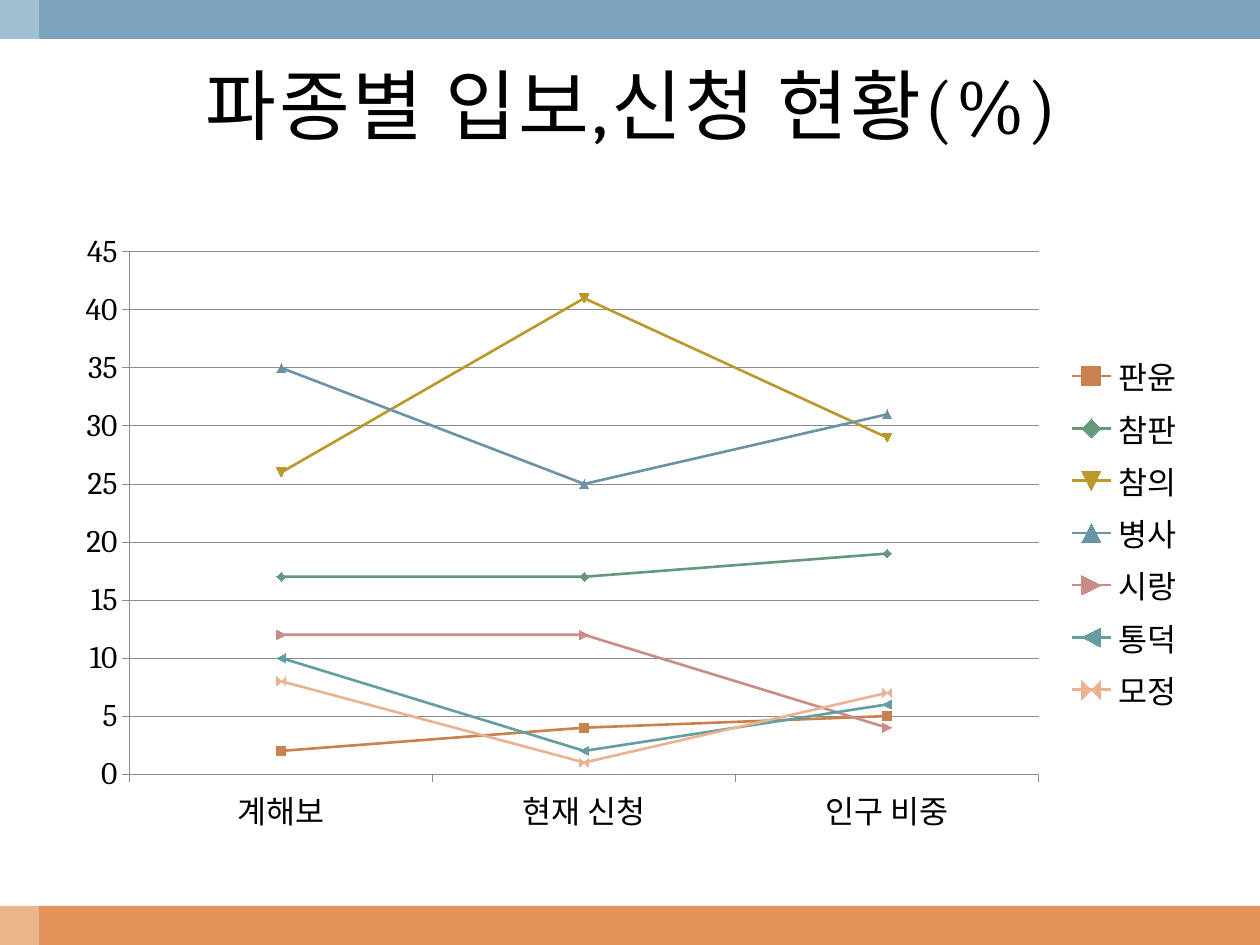
from dataclasses import dataclass

from lxml.etree import SubElement
from pptx import Presentation
from pptx.chart.data import CategoryChartData
from pptx.dml.color import RGBColor
from pptx.enum.chart import XL_CHART_TYPE, XL_LEGEND_POSITION, XL_TICK_MARK
from pptx.enum.shapes import MSO_SHAPE
from pptx.enum.text import MSO_ANCHOR, PP_ALIGN
from pptx.oxml.ns import qn
from pptx.util import Emu, Pt

EMU_PER_PX = 914400 / 126
SLIDE_WIDTH, SLIDE_HEIGHT, BAND = 1260, 945, 39


@dataclass(frozen=True)
class Theme:
    font: str = "Cambria"
    title_size: int = 44
    chart_size: int = 18
    text: str = "000000"
    axis: str = "8B8B8B"
    top_band: str = "7BA5BE"
    bottom_band: str = "E49458"
    overlay: str = "FFFFFF"


CATEGORIES = ["계해보", "현재 신청", "인구 비중"]
SERIES = [
    ("판윤", (2, 4, 5), "C9824D"),
    ("참판", (17, 17, 19), "66997C"),
    ("참의", (26, 41, 29), "BB982A"),
    ("병사", (35, 25, 31), "6C92A8"),
    ("시랑", (12, 12, 4), "C98D86"),
    ("통덕", (10, 2, 6), "639FA2"),
    ("모정", (8, 1, 7), "E9B291"),
]


def px(length):
    return Emu(round(length * EMU_PER_PX))


def paint(target, color):
    """Give a fill one solid colour."""
    target.solid()
    target.fore_color.rgb = RGBColor.from_string(color)


class SlideBuilder:
    def __init__(self, slide, theme):
        self.slide = slide
        self.theme = theme

    def style_font(self, font, size):
        font.name = self.theme.font
        font.size = Pt(size)
        font.bold = False
        font.color.rgb = RGBColor.from_string(self.theme.text)

    def title(self, text, left, top, width, height):
        shape = self.slide.shapes.title
        shape.left, shape.top = px(left), px(top)
        shape.width, shape.height = px(width), px(height)
        frame = shape.text_frame
        frame.word_wrap = True
        frame.vertical_anchor = MSO_ANCHOR.MIDDLE
        paragraph = frame.paragraphs[0]
        paragraph.alignment = PP_ALIGN.CENTER
        run = paragraph.add_run()
        run.text = text
        self.style_font(run.font, self.theme.title_size)
        run.font._element.set("spc", "145")

    def band(self, left, top, width, height, color, opacity=100):
        shape = self.slide.shapes.add_shape(
            MSO_SHAPE.RECTANGLE, px(left), px(top), px(width), px(height))
        shape.shadow.inherit = False
        shape.line.fill.background()
        paint(shape.fill, color)
        if opacity < 100:
            color_element = shape._element.spPr.find(qn("a:solidFill"))[0]
            SubElement(color_element, qn("a:alpha"), val=str(opacity * 1000))

    def line_chart(self, categories, series_rows, left, top, width, height):
        data = CategoryChartData()
        data.categories = categories
        for name, values, _ in series_rows:
            data.add_series(name, values)
        chart = self.slide.shapes.add_chart(
            XL_CHART_TYPE.LINE_MARKERS, px(left), px(top), px(width),
            px(height), data).chart
        self.style_font(chart.font, self.theme.chart_size)
        chart.has_title = False
        chart.has_legend = True
        chart.legend.position = XL_LEGEND_POSITION.RIGHT
        chart.legend.include_in_layout = False
        self.style_axes(chart)
        plot = chart.plots[0]
        plot.vary_by_categories = False
        for series, (_, _, color) in zip(plot.series, series_rows):
            series.smooth = False
            series.format.line.width = Pt(1.5)
            paint(series.format.line.fill, color)
            series.marker.size = 5
            paint(series.marker.format.fill, color)
            paint(series.marker.format.line.fill, color)

    def style_axes(self, chart):
        value_axis = chart.value_axis
        value_axis.minimum_scale = 0
        value_axis.maximum_scale = 45
        value_axis.major_unit = 5
        value_axis.has_major_gridlines = True
        gridlines = value_axis.major_gridlines
        for part in (chart.category_axis, value_axis, gridlines):
            part.format.line.width = Pt(0.5)
            paint(part.format.line.fill, self.theme.axis)
        for axis in (chart.category_axis, value_axis):
            axis.major_tick_mark = XL_TICK_MARK.OUTSIDE
            axis.minor_tick_mark = XL_TICK_MARK.NONE


def main():
    presentation = Presentation()
    presentation.slide_width = px(SLIDE_WIDTH)
    presentation.slide_height = px(SLIDE_HEIGHT)
    slide = presentation.slides.add_slide(presentation.slide_layouts[5])
    theme = Theme()
    builder = SlideBuilder(slide, theme)
    builder.band(0, SLIDE_HEIGHT - BAND, SLIDE_WIDTH, BAND, theme.bottom_band)
    builder.band(0, 0, SLIDE_WIDTH, BAND, theme.top_band)
    builder.band(0, 0, BAND, SLIDE_HEIGHT, theme.overlay, opacity=30)
    builder.line_chart(CATEGORIES, SERIES, 63, 221, 1134, 624)
    builder.title("파종별 입보,신청 현황(%)", 42, 39, 1179, 130)
    presentation.save("out.pptx")


if __name__ == "__main__":
    main()
